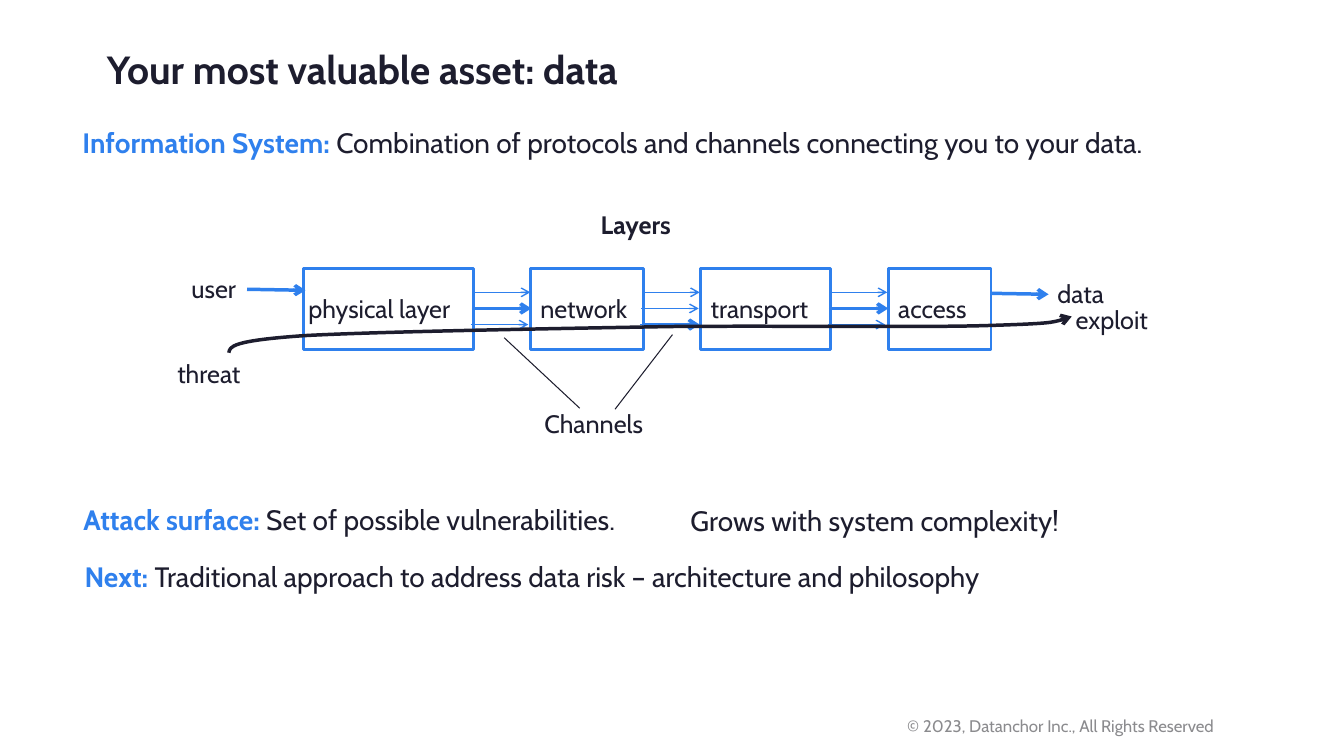
from lxml.etree import SubElement
from pptx import Presentation
from pptx.dml.color import RGBColor
from pptx.enum.shapes import MSO_CONNECTOR, MSO_SHAPE
from pptx.enum.text import MSO_ANCHOR, PP_ALIGN
from pptx.oxml.ns import qn
from pptx.util import Inches, Pt

FONT = "Cabin"
BLUE, DARK, GRAY = "2F80ED", "1D1D2E", "8B8B8E"

TITLE = "Your most valuable asset: data"
# left, top, width, height, size, runs of (text, color, bold)
STATEMENTS = [
    (0.72, 1.2, 12.23, 0.44, 20, [
        ("Information System: ", BLUE, True),
        ("Combination of protocols and channels connecting you to your data.", DARK, False)]),
    (0.73, 4.94, 6.43, 0.44, 20, [
        ("Attack surface:", BLUE, True),
        (" Set of possible vulnerabilities.", DARK, False)]),
    (6.75, 4.95, 4.28, 0.44, 20, [("Grows with system complexity!", DARK, False)]),
    (0.74, 5.5, 10.33, 0.44, 20, [
        ("Next:", BLUE, True),
        (" Traditional approach to address data risk – architecture and philosophy", DARK, False)]),
    (8.9, 7.05, 3.5, 0.3, 12, [("© 2023, Datanchor Inc., All Rights Reserved", GRAY, False)]),
]
# name, box left, box width, label left, label width
LAYERS = [
    ("physical layer", 3.01, 1.69, 2.96, 1.8),
    ("network", 5.26, 1.12, 5.26, 1.15),
    ("transport", 6.95, 1.29, 6.95, 1.29),
    ("access", 8.81, 1.02, 8.81, 1.02),
]
LAYER_TOP, LAYER_HEIGHT = 2.66, 0.81
# text, left, top, width, bold
LABELS = [
    ("Layers", 5.86, 2.03, 1.02, True),
    ("Channels", 5.3, 4, 1.28, False),
    ("user", 1.8, 2.66, 0.71, False),
    ("data", 10.39, 2.71, 0.73, False),
    ("threat", 1.66, 3.51, 0.91, False),
    ("exploit", 10.57, 2.97, 0.99, False),
]
LABEL_HEIGHT = 0.4
CHANNEL_TOP, CHANNEL_STEP, CHANNEL_LENGTH = 2.9, 0.16, 0.57
CHANNELS_IN_USE = [1, 2, 1]  # row of the thick arrow in each gap
USER_ARROW = (2.45, 2.87, 3.03, 2.88)
DATA_ARROW = (9.83, 2.91, 10.4, 2.92)
CHANNEL_POINTERS = [(5, 3.35, 5.75, 4.05), (6.67, 3.32, 6.1, 4.06)]
THREAT_START = (2.27, 3.5)
THREAT_CURVE = [  # three points for each cubic curve
    (2.28, 3.44), (2.29, 3.38), (3.02, 3.33),
    (3.75, 3.29), (5.52, 3.26), (6.65, 3.24),
    (7.77, 3.23), (9.13, 3.25), (9.79, 3.23),
    (10.45, 3.21), (10.54, 3.18), (10.63, 3.14),
]


def rgb(color):
    return RGBColor.from_string(color)


def fill_text(shape, runs, size):
    frame = shape.text_frame
    frame.word_wrap = True
    frame.vertical_anchor = MSO_ANCHOR.TOP
    paragraph = frame.paragraphs[0]
    paragraph.alignment = PP_ALIGN.LEFT
    paragraph.line_spacing = 1.0
    paragraph.space_before = Pt(0)
    for text, color, bold in runs:
        run = paragraph.add_run()
        run.text = text
        run.font.name = FONT
        run.font.size = Pt(size)
        run.font.bold = bold
        run.font.color.rgb = rgb(color)


def add_text(slide, left, top, width, height, size, runs):
    box = slide.shapes.add_textbox(Inches(left), Inches(top), Inches(width), Inches(height))
    fill_text(box, runs, size)


def style_line(shape, color, width, arrow=False):
    shape.line.color.rgb = rgb(color)
    shape.line.width = Pt(width)
    if arrow:
        SubElement(shape._element.spPr.find(qn("a:ln")), qn("a:tailEnd"), type="arrow")


def add_line(slide, ends, color, width, arrow=False):
    connector = slide.shapes.add_connector(MSO_CONNECTOR.STRAIGHT, *map(Inches, ends))
    style_line(connector, color, width, arrow)
    SubElement(connector._element.spPr, qn("a:effectLst"))


def add_layer(slide, name, left, width, label_left, label_width):
    box = slide.shapes.add_shape(MSO_SHAPE.RECTANGLE, Inches(left), Inches(LAYER_TOP),
                                 Inches(width), Inches(LAYER_HEIGHT))
    box.shadow.inherit = False
    box.fill.background()
    style_line(box, BLUE, 2)
    label_top = LAYER_TOP + (LAYER_HEIGHT - LABEL_HEIGHT) / 2
    add_text(slide, label_left, label_top, label_width, LABEL_HEIGHT, 18, [(name, DARK, False)])


def add_channels(slide, left, row_in_use):
    """Draw the three arrows of a gap, then the thick one over the row in use."""
    arrows = [(row, 0, 1) for row in range(3)] + [(row_in_use, 0.02, 2.5)]
    for row, shift, line_width in arrows:
        start, y = left + shift - 0.01 * row, CHANNEL_TOP + CHANNEL_STEP * row
        add_line(slide, (start, y, start + CHANNEL_LENGTH, y), BLUE, line_width, True)


def add_threat(slide):
    """Build the outline through all points, then turn each three into a cubic curve."""
    builder = slide.shapes.build_freeform(*map(Inches, THREAT_START))
    builder.add_line_segments([(Inches(x), Inches(y)) for x, y in THREAT_CURVE], close=False)
    threat = builder.convert_to_shape()
    threat.shadow.inherit = False
    threat.fill.background()
    style_line(threat, DARK, 2.5, True)
    outline = next(threat._element.iter(qn("a:moveTo"))).getparent()
    for index, segment in enumerate(outline.findall(qn("a:lnTo"))):
        if index % 3 == 0:
            curve = SubElement(outline, qn("a:cubicBezTo"))
        curve.append(segment[0])
        outline.remove(segment)


def main():
    presentation = Presentation()
    presentation.slide_width = Inches(13.33)
    presentation.slide_height = Inches(7.5)
    slide = presentation.slides.add_slide(presentation.slide_layouts[5])

    title = slide.shapes.title
    title.left, title.top, title.width, title.height = map(Inches, (0.96, 0.4, 6.04, 0.57))
    fill_text(title, [(TITLE, DARK, True)], 28)
    for statement in STATEMENTS:
        add_text(slide, *statement)

    for layer in LAYERS:
        add_layer(slide, *layer)
    for (_, left, width, *_), row_in_use in zip(LAYERS, CHANNELS_IN_USE):
        add_channels(slide, left + width - 0.01, row_in_use)
    for text, left, top, width, bold in LABELS:
        add_text(slide, left, top, width, LABEL_HEIGHT, 18, [(text, DARK, bold)])
    for pointer in CHANNEL_POINTERS:
        add_line(slide, pointer, DARK, 0.75)
    for arrow in (USER_ARROW, DATA_ARROW):
        add_line(slide, arrow, BLUE, 2.5, True)
    add_threat(slide)

    presentation.save("out.pptx")


if __name__ == "__main__":
    main()
